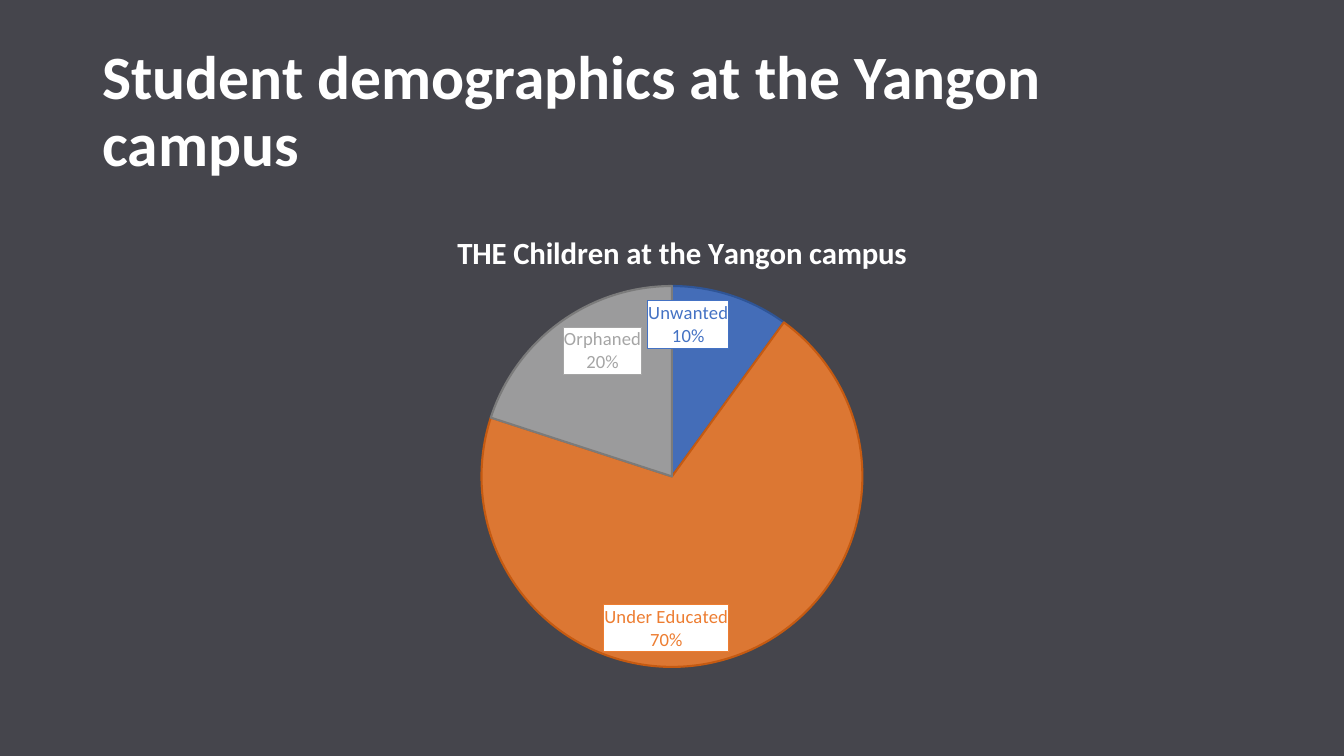
from dataclasses import dataclass

from lxml import etree
from pptx import Presentation, util as u
from pptx.chart.data import CategoryChartData
from pptx.dml.color import RGBColor
from pptx.enum import chart as ch, text
from pptx.oxml import parse_xml
from pptx.oxml.ns import nsdecls, qn

PX = 9525  # EMU in one px, 96 px to the inch


@dataclass(frozen=True)
class Theme:
    font: str = "Calibri"
    background: str = "45454C"
    light: str = "FFFFFF"
    title_size: float = 44
    chart_title_size: float = 22
    label_size: float = 13.3


THEME = Theme()

# Group, share in percent, slice colour, slice outline
GROUPS = [
    ("Unwanted", 10, "4472C4", "2F5597"),
    ("Under Educated", 70, "ED7D31", "C55A11"),
    ("Orphaned", 20, "A5A5A5", "7B7B7B"),
]


def px(*lengths):
    return [u.Emu(n * PX) for n in lengths]


def style_font(font, size, color, bold=False):
    font.name = THEME.font
    font.size = u.Pt(size)
    font.bold = bold
    font.color.rgb = RGBColor.from_string(color)


def add_title(s, box, words):
    tf = s.shapes.add_textbox(*px(*box)).text_frame
    tf.word_wrap = True
    tf.vertical_anchor = text.MSO_ANCHOR.MIDDLE
    tf.text = words
    p = tf.paragraphs[0]
    p.line_spacing = 0.9
    style_font(p.runs[0].font, THEME.title_size, THEME.light, bold=True)


def manual_layout(target="", **fractions):
    """Chart layout whose x, y, w and h are fractions of the chart area."""
    inner = f'<c:layoutTarget val="{target}"/>' if target else ""
    inner += "".join(f'<c:{k}Mode val="edge"/>' for k in fractions if k in "xy")
    inner += "".join(f'<c:{k} val="{v}"/>' for k, v in fractions.items())
    return parse_xml(f'<c:layout {nsdecls("c")}><c:manualLayout>{inner}'
                     '</c:manualLayout></c:layout>')


def style_slice(point, color, outline):
    fill = point.format.fill
    fill.solid()
    fill.fore_color.rgb = RGBColor.from_string(color)
    rgb = point.format.element if hasattr(point.format, "element") else None
    line = point.format.line
    line.color.rgb = RGBColor.from_string(outline)
    line.width = u.Pt(1.5)
    return rgb


def set_slice_alpha(series, percent):
    for rgb in series._element.xpath("c:dPt/c:spPr/a:solidFill/a:srgbClr"):
        etree.SubElement(rgb, qn("a:alpha")).set("val", str(percent * 1000))


def style_label(label, color):
    style_font(label.font, THEME.label_size, color)
    label.position = ch.XL_LABEL_POSITION.INSIDE_END


def box_label(d_lbl, color):
    """White box with a coloured edge, showing category over percentage."""
    d_lbl.find(qn("c:txPr")).addprevious(parse_xml(
        f'<c:spPr {nsdecls("c", "a")}>'
        f'<a:solidFill><a:srgbClr val="{THEME.light}"/></a:solidFill>'
        f'<a:ln w="9525"><a:solidFill><a:srgbClr val="{color}"/></a:solidFill></a:ln>'
        '</c:spPr>'))
    for flag, shown in (("Val", 0), ("CatName", 1), ("Percent", 1)):
        d_lbl.find(qn(f"c:show{flag}")).set("val", str(shown))
    etree.SubElement(d_lbl, qn("c:separator")).text = "\n"


def add_pie(s, box, heading, groups):
    data = CategoryChartData()
    data.categories = [name for name, *_ in groups]
    data.add_series("Series 1", [share for _, share, *_ in groups])
    chart = s.shapes.add_chart(ch.XL_CHART_TYPE.PIE, *px(*box), data).chart
    chart.has_legend = False
    style_font(chart.font, THEME.label_size, THEME.light)

    # Heading
    chart.has_title = True
    tf = chart.chart_title.text_frame
    tf.text = heading
    style_font(tf.paragraphs[0].runs[0].font, THEME.chart_title_size,
               THEME.light, bold=True)
    title = chart.chart_title._element
    for old in title.findall(qn("c:layout")):
        title.remove(old)
    title.find(qn("c:tx")).addnext(manual_layout(x=0.31, y=0.05))

    # Plot area
    plot = chart.plots[0]
    plot.vary_by_categories = True
    area = plot._element.getparent()
    for old in area.findall(qn("c:layout")):
        area.remove(old)
    area.insert(0, manual_layout("inner", x=0.335, y=0.176, w=0.33, h=0.794))

    # Slices and their labels
    series = plot.series[0]
    for i, (_, _, color, outline) in enumerate(groups):
        point = series.points[i]
        style_slice(point, color, outline)
        style_label(point.data_label, color)
    set_slice_alpha(series, 90)
    for d_lbl, (_, _, color, _) in zip(series._element.xpath("c:dLbls/c:dLbl"), groups):
        box_label(d_lbl, color)


def main():
    prs = Presentation()
    prs.slide_width, prs.slide_height = px(1280, 720)
    s = prs.slides.add_slide(prs.slide_layouts[6])
    s.background.fill.solid()
    s.background.fill.fore_color.rgb = RGBColor.from_string(THEME.background)

    add_title(s, (88, 38, 1104, 139), "Student demographics at the Yangon campus")
    add_pie(s, (88, 192, 1104, 457), "THE Children at the Yangon campus", GROUPS)
    prs.save("out.pptx")


if __name__ == "__main__":
    main()
